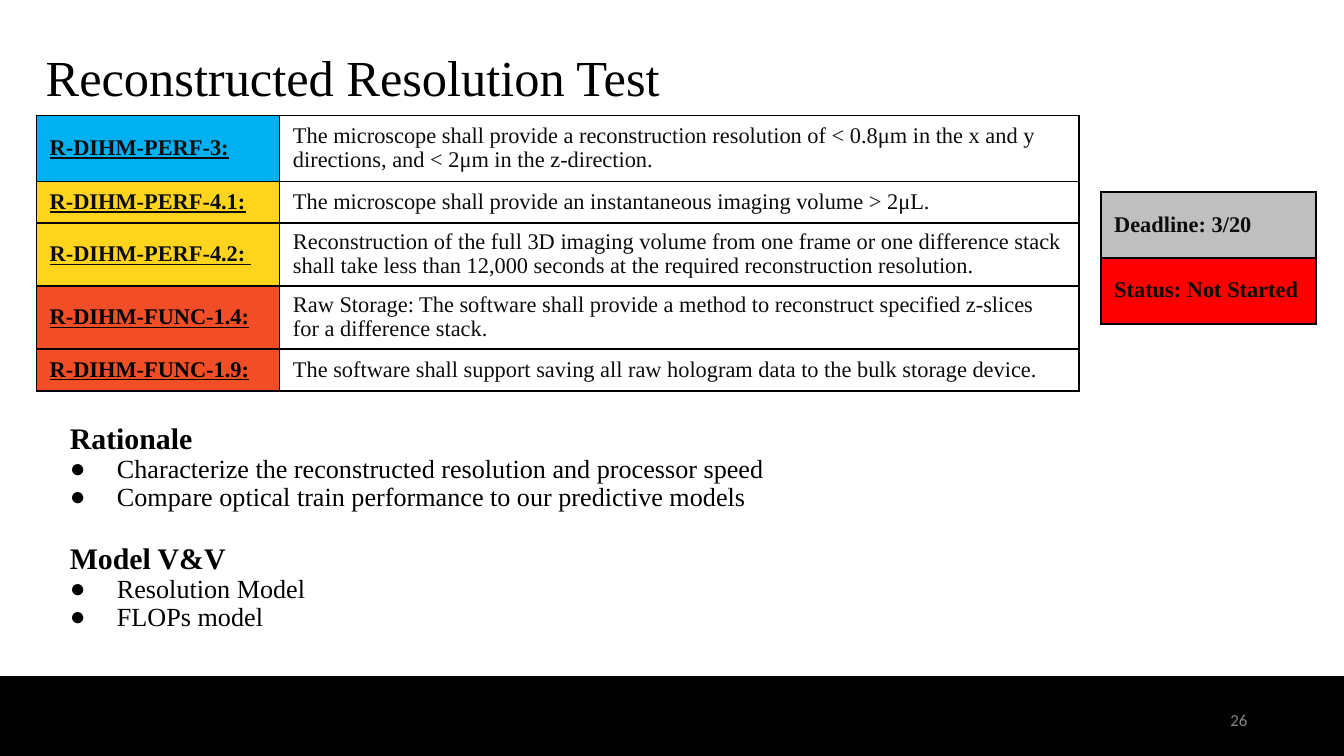
from lxml import etree
from pptx import Presentation
from pptx.dml.color import RGBColor
from pptx.enum.shapes import MSO_SHAPE
from pptx.enum.text import MSO_ANCHOR, MSO_AUTO_SIZE, PP_ALIGN
from pptx.oxml.ns import qn
from pptx.util import Inches, Pt

RECT = MSO_SHAPE.RECTANGLE
TOP, MIDDLE = MSO_ANCHOR.TOP, MSO_ANCHOR.MIDDLE
LEFT, RIGHT = PP_ALIGN.LEFT, PP_ALIGN.RIGHT
NO_FIT = MSO_AUTO_SIZE.NONE

BLACK = RGBColor(0x00, 0x00, 0x00)
INK = RGBColor(0x0D, 0x0D, 0x0D)
GRAY = RGBColor(0x88, 0x88, 0x88)
SILVER = RGBColor(0xBF, 0xBF, 0xBF)
BLUE = RGBColor(0x00, 0xB0, 0xF0)
YELLOW = RGBColor(0xFE, 0xD4, 0x1D)
ORANGE = RGBColor(0xF1, 0x4E, 0x28)
RED = RGBColor(0xFF, 0x00, 0x00)
SERIF = "Times New Roman"

WIDTH = Inches(10)
HEIGHT = WIDTH * 9 // 16
TITLE = "Reconstructed Resolution Test"
PAGE = 26

# label, label fill, label colour, requirement, row height
REQUIREMENTS = [
    ("R-DIHM-PERF-3:", BLUE, INK,
     "The microscope shall provide a reconstruction resolution of < 0.8μm in the x and y "
     "directions, and < 2μm in the z-direction.", 0.49),
    ("R-DIHM-PERF-4.1:", YELLOW, INK,
     "The microscope shall provide an instantaneous imaging volume > 2μL.", 0.31),
    ("R-DIHM-PERF-4.2: ", YELLOW, INK,
     "Reconstruction of the full 3D imaging volume from one frame or one difference stack "
     "shall take less than 12,000 seconds at the required reconstruction resolution.", 0.47),
    ("R-DIHM-FUNC-1.4:", ORANGE, BLACK,
     "Raw Storage: The software shall provide a method to reconstruct specified z-slices "
     "for a difference stack.", 0.47),
    ("R-DIHM-FUNC-1.9:", ORANGE, BLACK,
     "The software shall support saving all raw hologram data to the bulk storage device.", 0.31),
]
PROGRESS = [("Deadline: 3/20", SILVER), ("Status: Not Started", RED)]
SECTIONS = [
    ("Rationale", [
        "Characterize the reconstructed resolution and processor speed",
        "Compare optical train performance to our predictive models",
    ]),
    ("Model V&V", ["Resolution Model", "FLOPs model"]),
]


def set_font(font, size, color, name=SERIF, **styles):
    font.size, font.name, font.color.rgb = Pt(size), name, color
    for key, value in styles.items():
        setattr(font, key, value)


def place(sp, left, top, width, height, anchor):
    sp.left, sp.top, sp.width, sp.height = map(Inches, (left, top, width, height))
    tf = sp.text_frame
    tf.word_wrap, tf.auto_size, tf.vertical_anchor = True, NO_FIT, anchor
    for side in ("left", "right", "top", "bottom"):
        setattr(tf, f"margin_{side}", Inches(0.1))
    return tf


def set_bullet(p, char, margin, indent):
    pPr = p._p.get_or_add_pPr()
    pPr.set("marL", str(Inches(margin)))
    pPr.set("indent", str(Inches(indent)))
    if char:
        color = etree.SubElement(pPr, qn("a:buClr"))
        etree.SubElement(color, qn("a:srgbClr"), val=str(BLACK))
        etree.SubElement(pPr, qn("a:buChar"), char=char)
    else:
        etree.SubElement(pPr, qn("a:buNone"))


def set_borders(cell):
    tcPr = cell._tc.get_or_add_tcPr()
    for tag in ("a:lnL", "a:lnR", "a:lnT", "a:lnB"):
        ln = etree.SubElement(tcPr, qn(tag), w=str(Pt(0.96)))
        fill = etree.SubElement(ln, qn("a:solidFill"))
        etree.SubElement(fill, qn("a:srgbClr"), val=str(BLACK))


def add_grid(slide, left, top, widths, heights, rows):
    """Add a table; each cell is (text, fill or None, colour, font styles)."""
    table = slide.shapes.add_table(
        len(rows), len(widths), Inches(left), Inches(top),
        Inches(sum(widths)), Inches(sum(heights))).table
    table.first_row = table.horz_banding = False
    for column, width in zip(table.columns, widths):
        column.width = Inches(width)
    for r, (height, row) in enumerate(zip(heights, rows)):
        table.rows[r].height = Inches(height)
        for c, (text, fill, color, styles) in enumerate(row):
            cell = table.cell(r, c)
            cell.text = text
            cell.vertical_anchor = MIDDLE
            set_borders(cell)
            if fill is None:
                cell.fill.background()
            else:
                cell.fill.solid()
                cell.fill.fore_color.rgb = fill
            p = cell.text_frame.paragraphs[0]
            p.line_spacing = 0.95
            set_font(p.runs[0].font, 12, color, **styles)


def add_sections(tf):
    lines = [(text, i == 0) for heading, items in SECTIONS
             for i, text in enumerate([heading, *items])]
    for n, (text, is_heading) in enumerate(lines):
        p = tf.paragraphs[0] if n == 0 else tf.add_paragraph()
        if is_heading:
            set_bullet(p, None, 0.15, 0)
        else:
            set_bullet(p, "●", 0.5, -0.35)
        p.line_spacing = 0.9
        p.space_before = Pt(17 if is_heading and n else 0)
        r = p.add_run()
        r.text = text
        set_font(r.font, 16 if is_heading else 14, BLACK, bold=is_heading)


def main():
    prs = Presentation()
    prs.slide_width, prs.slide_height = WIDTH, HEIGHT
    slide = prs.slides.add_slide(prs.slide_layouts[1])
    title, body = slide.placeholders

    footer_top = Inches(5.04)
    footer = slide.shapes.add_shape(RECT, 0, footer_top, WIDTH, HEIGHT - footer_top)
    footer.shadow.inherit = False
    footer.fill.solid()
    footer.fill.fore_color.rgb = footer.line.color.rgb = BLACK
    footer.line.width = Pt(1)

    tf = place(title, 0.24, 0.29, 9.32, 0.63, TOP)
    tf.text = TITLE
    p = tf.paragraphs[0]
    p.alignment, p.line_spacing = LEFT, 0.9
    set_font(p.runs[0].font, 27, BLACK)

    number = slide.shapes.add_textbox(0, 0, 0, 0)
    tf = place(number, 8.78, 5.14, 0.6, 0.43, MIDDLE)
    tf.text = str(PAGE)
    p = tf.paragraphs[0]
    p.alignment = RIGHT
    set_font(p.runs[0].font, 9, GRAY, "Calibri")

    label_style = {"bold": True, "underline": True}
    plain_style = {"bold": False, "underline": False}
    add_grid(slide, 0.27, 0.86, [1.81, 5.95], [row[-1] for row in REQUIREMENTS],
             [[(label, fill, color, label_style), (text, None, INK, plain_style)]
              for label, fill, color, text, _ in REQUIREMENTS])
    add_grid(slide, 8.19, 1.43, [1.6], [0.49] * len(PROGRESS),
             [[(text, fill, INK, {"bold": True})] for text, fill in PROGRESS])

    add_sections(place(body, 0.27, 3.05, 7.75, 1.9, TOP))
    prs.save("out.pptx")


if __name__ == "__main__":
    main()
